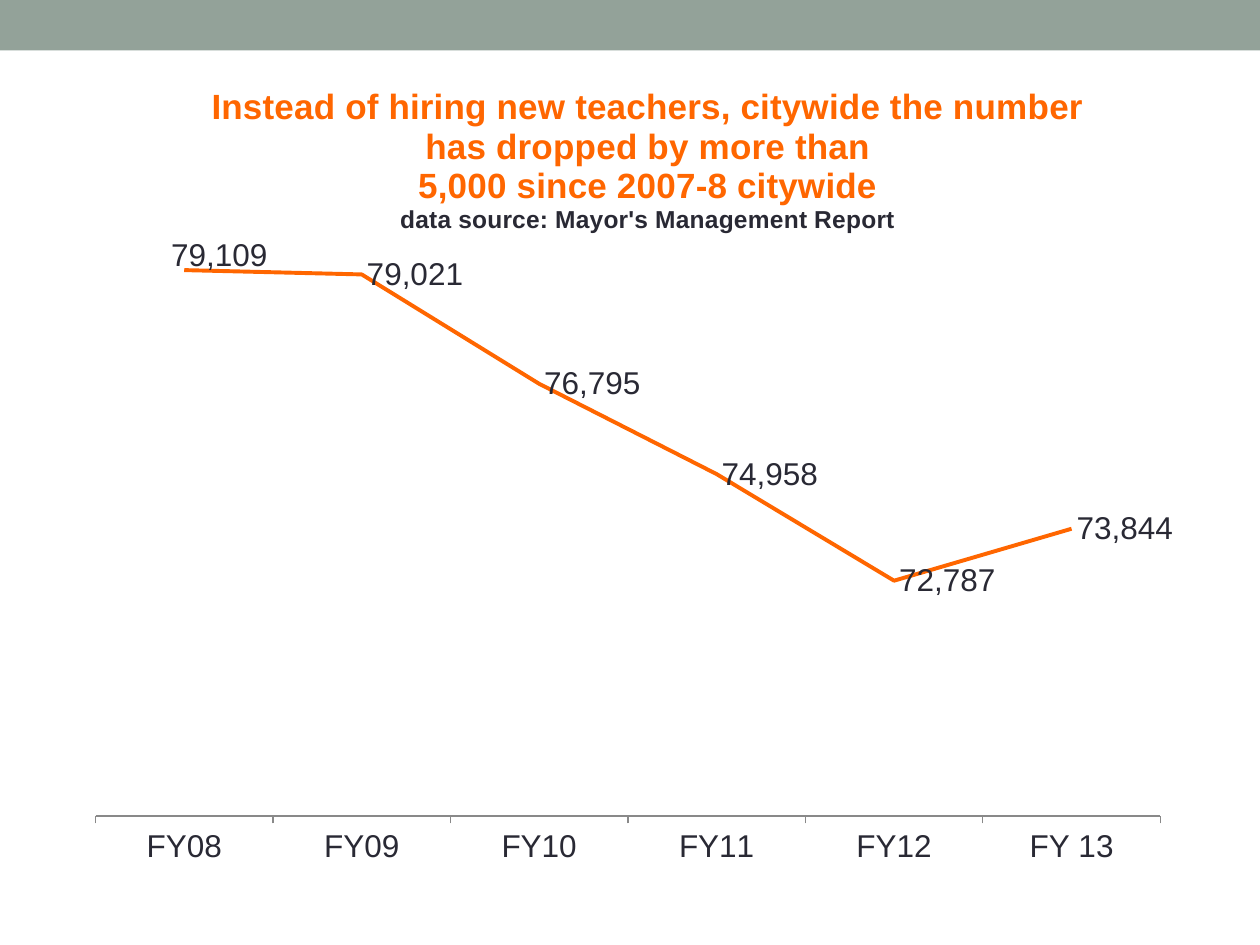
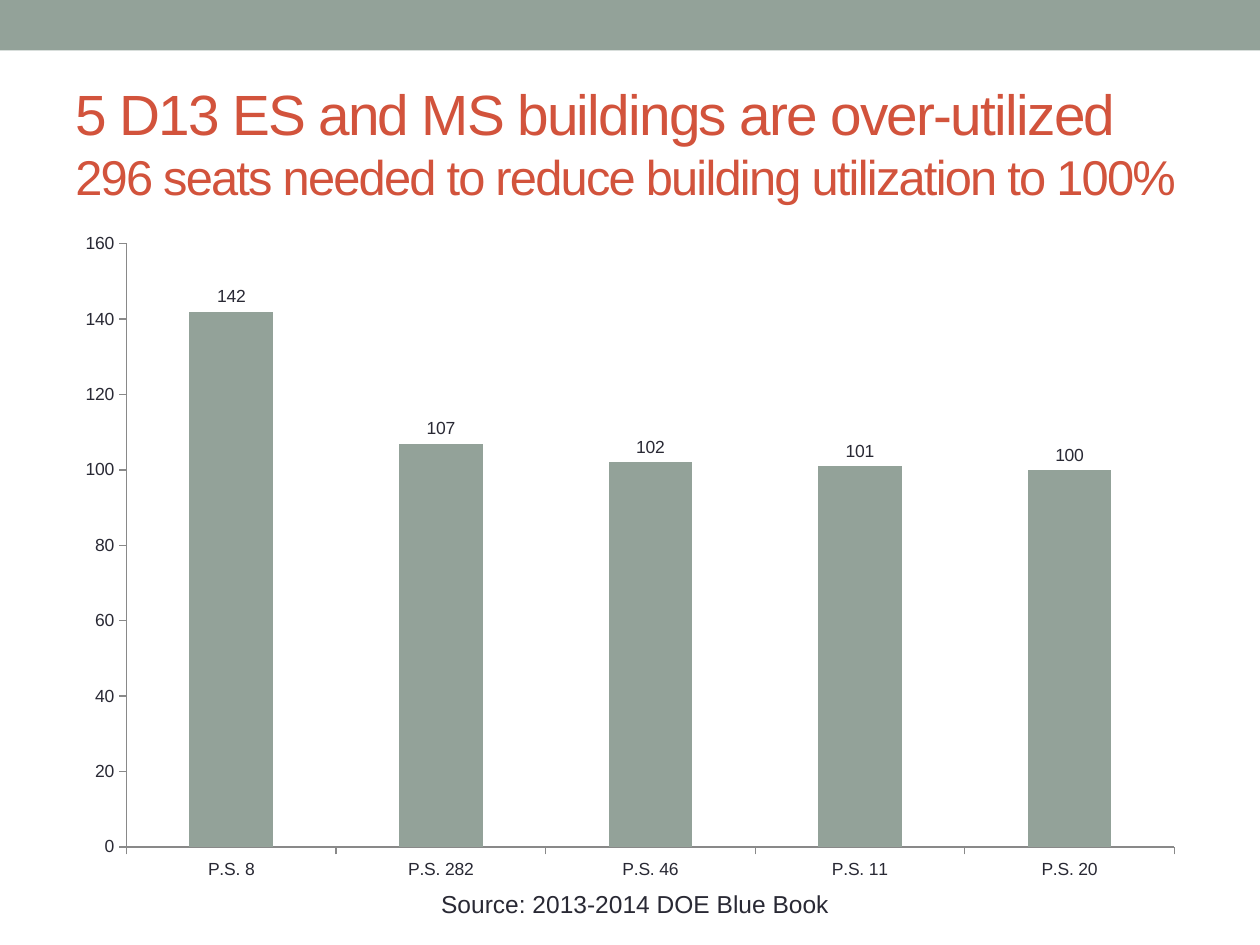
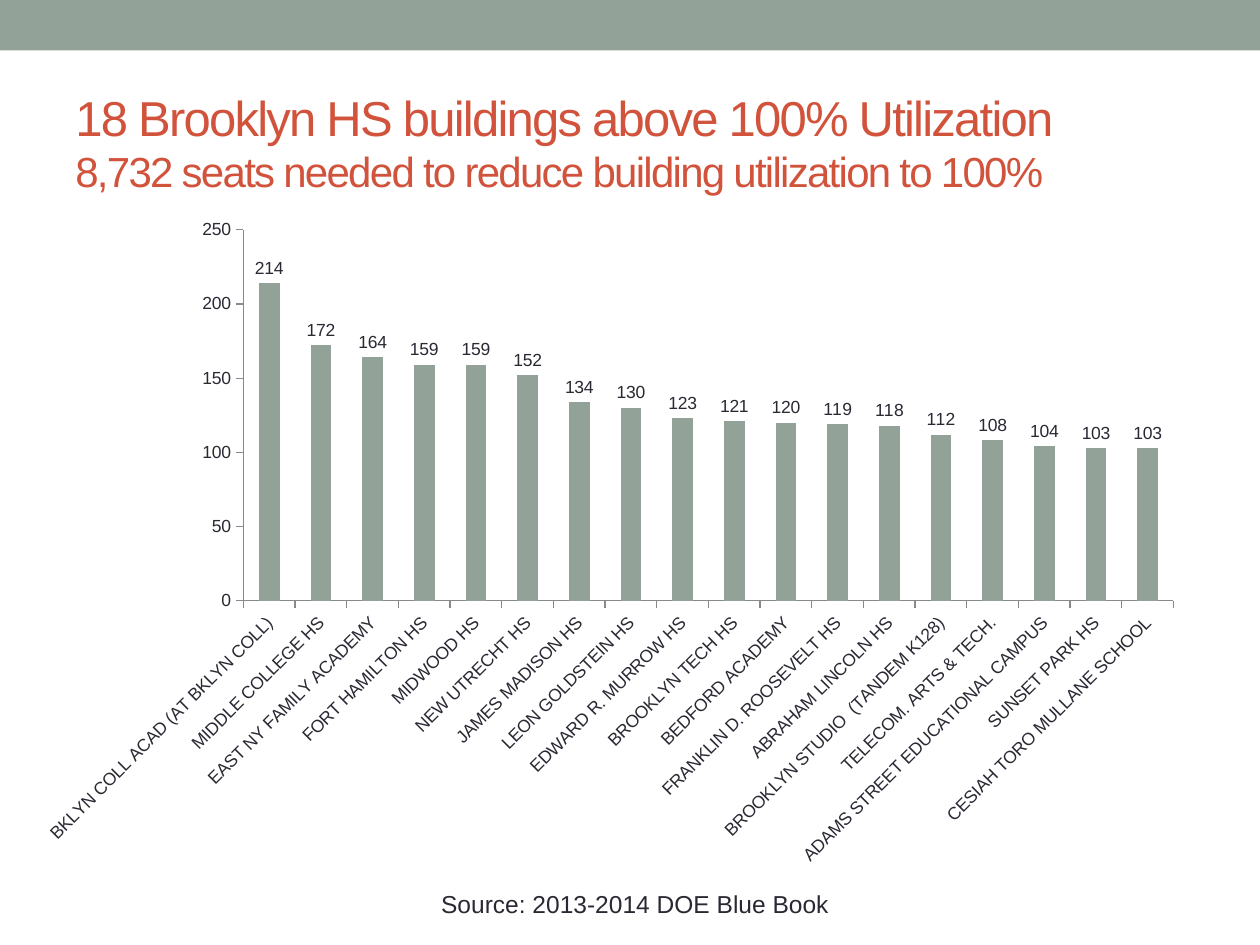
from dataclasses import dataclass

from lxml import etree
from pptx import Presentation
from pptx.chart.data import CategoryChartData
from pptx.dml.color import RGBColor
from pptx.enum.chart import XL_CHART_TYPE, XL_LABEL_POSITION, XL_MARKER_STYLE, XL_TICK_MARK
from pptx.enum.shapes import MSO_SHAPE
from pptx.enum.text import MSO_ANCHOR, PP_ALIGN
from pptx.oxml.ns import qn
from pptx.util import Pt

LINE, COLUMN = XL_CHART_TYPE.LINE, XL_CHART_TYPE.COLUMN_CLUSTERED
RIGHT, OUTSIDE_END = XL_LABEL_POSITION.RIGHT, XL_LABEL_POSITION.OUTSIDE_END
NO_MARKER, TICK_OUT = XL_MARKER_STYLE.NONE, XL_TICK_MARK.OUTSIDE
RECT = MSO_SHAPE.RECTANGLE
TOP, MIDDLE = MSO_ANCHOR.TOP, MSO_ANCHOR.MIDDLE
LEFT, CENTER = PP_ALIGN.LEFT, PP_ALIGN.CENTER


@dataclass(frozen=True)
class Theme:
    """Colours, font and type sizes of the deck."""
    font: str = "Arial"
    sage: str = "93A299"
    ink: str = "292934"
    brick: str = "D2533C"
    orange: str = "FF6600"
    axis: str = "898989"
    chart_size: float = 10
    label_size: float = 18
    heading_size: float = 20
    source_size: float = 14


def set_font(font, color, size, **values):
    """Apply colour, size and further attributes to a font."""
    font.color.rgb = RGBColor.from_string(color)
    for name, value in {"name": Theme.font, "size": Pt(size), **values}.items():
        setattr(font, name, value)


def set_layout(parent, index, **values):
    """Give a chart part a manual layout as its child at index."""
    for old in parent.findall(qn("c:layout")):
        parent.remove(old)
    layout = etree.SubElement(parent, qn("c:layout"))
    manual = etree.SubElement(layout, qn("c:manualLayout"))
    for name, value in values.items():
        etree.SubElement(manual, qn(f"c:{name}")).set("val", str(value))
    parent.insert(index, layout)


class Deck:
    """Holds the theme, the presentation and the current slide."""

    def __init__(self, theme):
        """Start an empty 4:3 presentation."""
        self.theme = theme
        self.prs = Presentation()
        self.prs.slide_width, self.prs.slide_height = Pt(720), Pt(540)

    def slide(self):
        """Add a blank slide with the band across its top."""
        self.s = self.prs.slides.add_slide(self.prs.slide_layouts[6])
        band = self.s.shapes.add_shape(RECT, 0, 0, self.prs.slide_width, Pt(28.8))
        band.shadow.inherit = False
        band.fill.solid()
        band.fill.fore_color.rgb = RGBColor.from_string(self.theme.sage)
        band.line.fill.background()

    def text(self, box, align, anchor):
        """Add a wrapping text box and return its paragraph."""
        tf = self.s.shapes.add_textbox(*map(Pt, box)).text_frame
        tf.word_wrap, tf.vertical_anchor = True, anchor
        p = tf.paragraphs[0]
        p.alignment = align
        return p

    def title(self, lines, break_size):
        """Add a title from (text, size) lines."""
        p = self.text((36, 42, 648, 78), LEFT, MIDDLE)
        for i, (text, size) in enumerate(lines):
            if i:
                p.add_line_break()
                br = p._p.findall(qn("a:br"))[-1]
                etree.SubElement(br, qn("a:rPr")).set("sz", str(break_size * 100))
            r = p.add_run()
            r.text = text
            set_font(r.font, self.theme.brick, size)
            r._r.get_or_add_rPr().set("spc", "-100")

    def source(self, text):
        """Add the centred source line at the foot."""
        r = self.text((21.6, 504.7, 682.6, 24.5), CENTER, TOP).add_run()
        r.text = text
        set_font(r.font, self.theme.ink, self.theme.source_size)

    def chart(self, kind, box, cats, vals, scale, number_format="General"):
        """Add a one-series chart without legend or gridlines."""
        data = CategoryChartData(number_format=number_format)
        data.categories = cats
        data.add_series("Series 1", vals)
        chart = self.s.shapes.add_chart(kind, *map(Pt, box), data).chart
        chart.has_legend = chart.has_title = False
        set_font(chart.font, self.theme.ink, self.theme.chart_size)
        for axis in (chart.category_axis, chart.value_axis):
            axis.has_major_gridlines = False
            axis.major_tick_mark = TICK_OUT
            axis.format.line.color.rgb = RGBColor.from_string(self.theme.axis)
            axis.format.line.width = Pt(0.75)
        for name, value in zip(("minimum_scale", "maximum_scale", "major_unit"), scale):
            setattr(chart.value_axis, name, value)
        chart.plots[0].vary_by_categories = False
        return chart

    def labels(self, series, position, size, number_format="General"):
        """Show the values of a series."""
        labels = series.data_labels
        set_font(labels.font, self.theme.ink, size)
        values = {"show_value": True, "position": position,
                  "number_format": number_format, "number_format_is_linked": False}
        for name, value in values.items():
            setattr(labels, name, value)

    def columns(self, box, cats, vals, scale, slanted=False):
        """Add a column chart with values above the columns."""
        chart = self.chart(COLUMN, box, cats, vals, scale)
        chart.plots[0].gap_width = 150
        series = chart.plots[0].series[0]
        series.format.fill.solid()
        series.format.fill.fore_color.rgb = RGBColor.from_string(self.theme.sage)
        self.labels(series, OUTSIDE_END, self.theme.chart_size)
        if slanted:
            axis = chart.category_axis
            set_font(axis.tick_labels.font, self.theme.ink, self.theme.chart_size)
            axis._element.find(qn("c:txPr")).find(qn("a:bodyPr")).set("rot", "-2700000")

    def trend(self, box, heading, cats, vals, scale):
        """Add a line chart headed by (text, colour, size) lines."""
        t, fmt = self.theme, "#,##0"
        chart = self.chart(LINE, box, cats, vals, scale, fmt)
        chart.value_axis.visible = False
        set_font(chart.category_axis.tick_labels.font, t.ink, t.label_size)
        tf = chart.chart_title.text_frame
        for i, (text, color, size) in enumerate(heading):
            p = tf.add_paragraph() if i else tf.paragraphs[0]
            r = p.add_run()
            r.text = text
            set_font(r.font, color, size, bold=True)
        edges = {"xMode": "edge", "yMode": "edge"}
        set_layout(chart.chart_title._element, 1, **edges, x=0.13, y=0.01)
        set_layout(chart._chartSpace.chart.plotArea, 0, layoutTarget="inner", **edges,
                   x=0.031, y=0.182, w=0.939, h=0.702)
        series = chart.plots[0].series[0]
        series.smooth = False
        series.marker.style = NO_MARKER
        series.format.line.color.rgb = RGBColor.from_string(t.orange)
        series.format.line.width = Pt(2.25)
        self.labels(series, RIGHT, t.label_size, fmt)
        first = series.points[0].data_label
        set_font(first.font, t.ink, t.label_size)
        first.position = RIGHT
        set_layout(series._element.find(".//" + qn("c:dLbl")), 1, x=-0.016, y=-0.018)


def main():
    """Build the three slides."""
    t = Theme()
    deck = Deck(t)
    source = "Source: 2013-2014 DOE Blue Book"

    deck.slide()
    deck.trend(
        (34.5, 42, 648, 480),
        [("Instead of hiring new teachers, citywide the number has dropped by more than",
          t.orange, t.heading_size),
         ("5,000 since 2007-8 citywide", t.orange, t.heading_size),
         ("data source: Mayor's Management Report", t.ink, t.source_size)],
        ["FY08", "FY09", "FY10", "FY11", "FY12", "FY 13"],
        [79109, 79021, 76795, 74958, 72787, 73844], (68000, 80000, 2000))

    deck.slide()
    deck.title([("5 D13 ES and MS buildings are over-utilized", 32.4),
                ("296 seats needed to reduce building utilization to 100%", 27.9)], 40)
    deck.columns((36, 126, 648, 384),
                 ["P.S. 8", "P.S. 282", "P.S. 46", "P.S. 11", "P.S. 20"],
                 [142, 107, 102, 101, 100], (0, 160, 20))
    deck.source(source)

    schools = {
        "BKLYN COLL ACAD (AT BKLYN COLL)": 214,
        "MIDDLE COLLEGE HS": 172,
        "EAST NY FAMILY ACADEMY": 164,
        "FORT HAMILTON HS": 159,
        "MIDWOOD HS": 159,
        "NEW UTRECHT HS": 152,
        "JAMES MADISON HS": 134,
        "LEON GOLDSTEIN HS": 130,
        "EDWARD R. MURROW HS": 123,
        "BROOKLYN TECH HS": 121,
        "BEDFORD ACADEMY": 120,
        "FRANKLIN D. ROOSEVELT HS": 119,
        "ABRAHAM LINCOLN HS": 118,
        "BROOKLYN STUDIO  (TANDEM K128)": 112,
        "TELECOM. ARTS & TECH.": 108,
        "ADAMS STREET EDUCATIONAL CAMPUS": 104,
        "SUNSET PARK HS": 103,
        "CESIAH TORO MULLANE SCHOOL": 103,
    }
    deck.slide()
    deck.title([("18 Brooklyn HS buildings above 100% Utilization", 28),
                ("8,732 seats needed to reduce building utilization to 100%", 24)], 36)
    deck.columns((13, 118, 671, 384), list(schools), list(schools.values()),
                 (0, 250, 50), slanted=True)
    deck.source(source)

    deck.prs.save("out.pptx")


if __name__ == "__main__":
    main()
